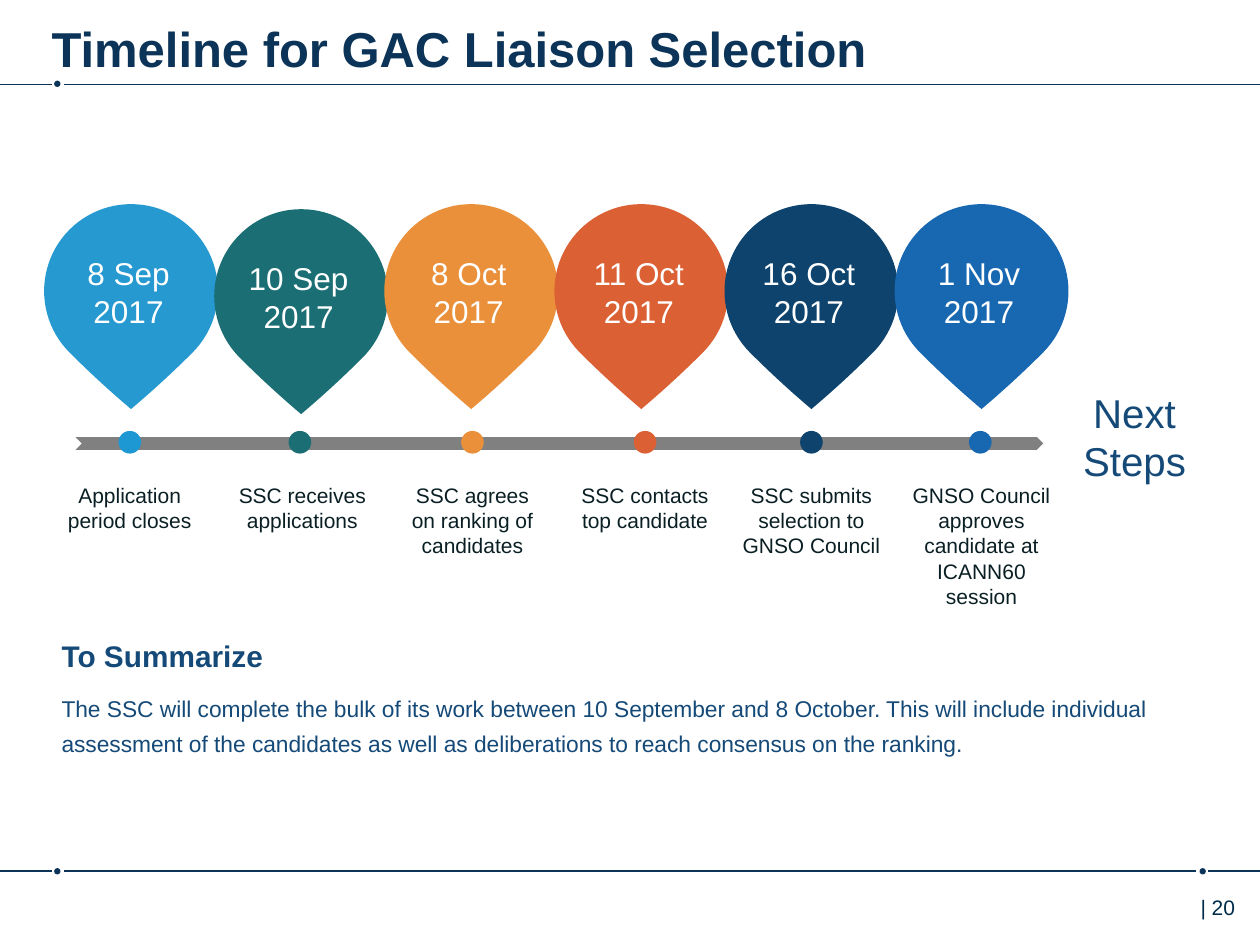
"""Build the timeline slide for the GAC liaison selection."""
from lxml import etree
from pptx import Presentation
from pptx.dml.color import RGBColor
from pptx.enum.shapes import MSO_CONNECTOR, MSO_SHAPE
from pptx.enum.text import MSO_ANCHOR, PP_ALIGN
from pptx.oxml.ns import qn
from pptx.util import Inches, Pt

STRAIGHT = MSO_CONNECTOR.STRAIGHT
OVAL, CHEVRON, TEARDROP = MSO_SHAPE.OVAL, MSO_SHAPE.CHEVRON, MSO_SHAPE.TEAR
LEFT, CENTER = PP_ALIGN.LEFT, PP_ALIGN.CENTER
TOP = MSO_ANCHOR.TOP
NAVY, BLUE, INK, GREY, WHITE = "0C3458", "154A78", "0A1F24", "808080", "FFFFFF"


def add_shape(kind, x, y, w, h, color):
    s = slide.shapes.add_shape(kind, Inches(x), Inches(y), Inches(w), Inches(h))
    s.shadow.inherit = False
    s.fill.solid()
    s.fill.fore_color.rgb = RGBColor.from_string(color)
    s.line.fill.background()
    return s


def add_text(text, x, y, w, h, size=12, color=INK, bold=False, align=CENTER,
             spacing=None, box=None):
    s = box or slide.shapes.add_textbox(0, 0, 0, 0)
    s.left, s.top, s.width, s.height = Inches(x), Inches(y), Inches(w), Inches(h)
    tf = s.text_frame
    tf.word_wrap = True
    tf.vertical_anchor = TOP
    tf.text = text
    for p in tf.paragraphs:
        p.alignment = align
        p.line_spacing = spacing
        p.font.name = "Arial"
        p.font.size = Pt(size)
        p.font.bold = bold
        p.font.color.rgb = RGBColor.from_string(color)
    return s


prs = Presentation()
prs.slide_width, prs.slide_height = Inches(10), Inches(7.5)
slide = prs.slides.add_slide(prs.slide_layouts[5])

for x, y in [(0.43, 0.64), (0.43, 6.89), (9.52, 6.89)]:
    add_shape(OVAL, x, y, 0.05, 0.05, NAVY)

rules = [(0, 0.41, 0.67), (0.51, 10, 0.67),
         (0, 0.41, 6.91), (0.51, 9.49, 6.91), (9.59, 10, 6.91)]
for x1, x2, y in rules:
    s = slide.shapes.add_connector(STRAIGHT, Inches(x1), Inches(y), Inches(x2), Inches(y))
    s.line.color.rgb = RGBColor.from_string(NAVY)
    s.line.width = Pt(1)
    etree.SubElement(s._element.spPr, qn("a:effectLst"))

title = add_text("Timeline for GAC Liaison Selection", 0.41, 0.05, 8.76, 0.49,
                 size=28, color=NAVY, bold=True, align=LEFT, spacing=1.1,
                 box=slide.shapes.title)
title.text_frame.margin_left = title.text_frame.margin_right = 0

add_shape(CHEVRON, 0.6, 3.47, 7.68, 0.1, GREY)

steps = [
    ("8 Sep 2017", "Application period closes", "2599D0", "1D98D3", 1.62, 0.94, 0.38, 0.5),
    ("10 Sep\n2017", "SSC receives applications", "1B6F74", "1B6F74", 1.66, 2.29, 1.75, 0.5),
    ("8 Oct\n2017", "SSC agrees on ranking of candidates", "EA903A", "EA903A",
     1.62, 3.66, 3.1, 0.71),
    ("11 Oct\n2017", "SSC contacts top candidate", "DB6033", "DB6033", 1.62, 5.03, 4.47, 0.5),
    ("16 Oct 2017", "SSC submits selection to GNSO Council", "0D436C", "0D436C",
     1.62, 6.35, 5.79, 0.71),
    ("1 Nov\n2017", "GNSO Council approves candidate at ICANN60 session", "1768B1", "1768B1",
     1.62, 7.69, 7.14, 1.11),
]
for i, (date, step, pin_color, dot_color, pin_y, dot_x, step_x, step_h) in enumerate(steps):
    pin_x = 0.35 + 1.35 * i
    pin = add_shape(TEARDROP, pin_x, pin_y, 1.38, 1.38, pin_color)
    pin.adjustments[0] = 0.96
    pin.rotation = 135
    add_shape(OVAL, dot_x, 3.42, 0.18, 0.18, dot_color)
    add_text(date, pin_x + 0.02, pin_y + 0.35, 1.3, 0.71, size=18, color=WHITE)
    add_text(step, step_x, 3.78, 1.3, step_h)

add_text("Next\nSteps", 8.3, 3.03, 1.41, 0.91, size=23, color=BLUE)
add_text("To Summarize", 0.39, 5.02, 7.85, 0.38, size=17, color=BLUE, bold=True,
         align=LEFT, spacing=Pt(19.8))
add_text("The SSC will complete the bulk of its work between 10 September and 8 October. "
         "This will include individual assessment of the candidates as well as "
         "deliberations to reach consensus on the ranking.",
         0.39, 5.41, 8.86, 0.66, size=13, color=BLUE, align=LEFT, spacing=Pt(19.8))
add_text("| 20", 9.43, 7.05, 0.57, 0.4, color="002B49", align=LEFT)

prs.save("out.pptx")
